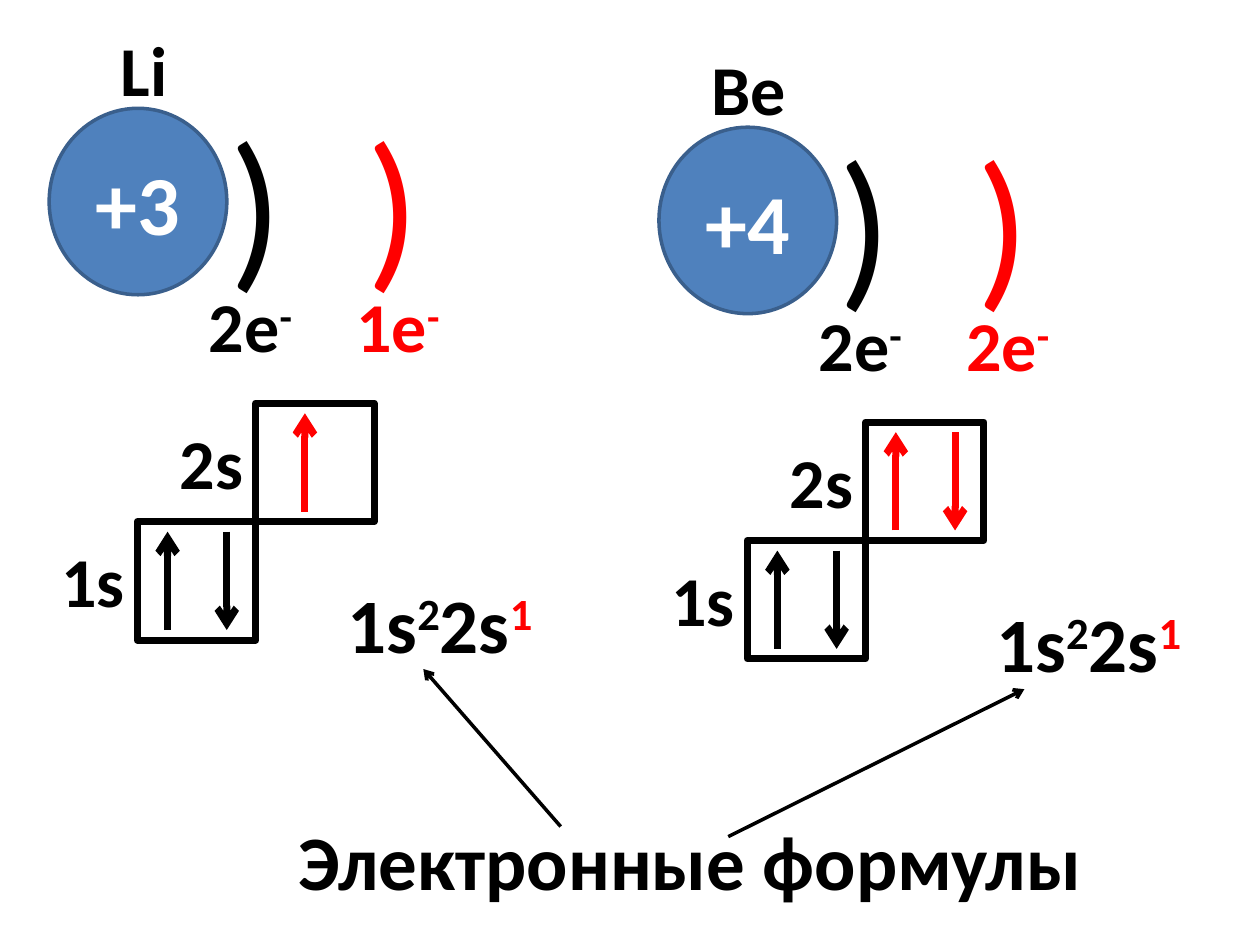
import pptx
import pptx.util
import pptx.dml.color
import pptx.enum.shapes
import pptx.enum.text
import pptx.oxml.ns
import lxml.etree

Inches = pptx.util.Inches
SHAPE = pptx.enum.shapes.MSO_SHAPE
COLORS = {"black": "000000", "red": "FF0000", "white": "FFFFFF",
          "nucleus": "4F81BD", "rim": "3A5F8C"}
LABEL = {"size": pptx.util.Pt(40), "bold": True, "name": "Calibri"}
FORMULA = {**LABEL, "size": pptx.util.Pt(44)}
CHARGE = {**LABEL, "size": pptx.util.Pt(48)}
SHELL = {**LABEL, "size": pptx.util.Pt(100), "bold": False}
CELL = 0.94
ATOMS = [
    {"box": (0.39, 0.16), "symbol": "Li", "symbol_at": (0.47, 0.58),
     "charge": "+3", "outer": "1e", "outer_spins": [(0.39, True)], "formula_x": 2.27},
    {"box": (5.23, 0.31), "symbol": "Be", "symbol_at": (0.32, 0.8),
     "charge": "+4", "outer": "2e", "outer_spins": [(0.24, True), (0.71, False)],
     "formula_x": 2.58},
]


def rgb(name):
    """Return the palette colour of that name."""
    return pptx.dml.color.RGBColor.from_string(COLORS[name])


def add_runs(p, runs, fmt):
    """Add (text, colour, raised) runs to a paragraph."""
    for text, color, raised in runs:
        r = p.add_run()
        r.text = text
        for key, value in fmt.items():
            setattr(r.font, key, value)
        r.font.color.rgb = rgb(color)
        if raised:
            r.font._element.set("baseline", "30000")


def add_text(s, x, y, w, h, runs, fmt=LABEL):
    """Place an unwrapped text box."""
    tf = s.shapes.add_textbox(Inches(x), Inches(y), Inches(w), Inches(h)).text_frame
    tf.word_wrap = False
    tf.auto_size = pptx.enum.text.MSO_AUTO_SIZE.SHAPE_TO_FIT_TEXT
    add_runs(tf.paragraphs[0], runs, fmt)


def add_arrow(s, start, end, color, width):
    """Draw a straight line with an open arrowhead at its end."""
    c = s.shapes.add_connector(pptx.enum.shapes.MSO_CONNECTOR.STRAIGHT,
                               *[Inches(v) for v in (*start, *end)])
    c.line.color.rgb = rgb(color)
    c.line.width = pptx.util.Pt(width)
    qn = pptx.oxml.ns.qn
    lxml.etree.SubElement(c.line._get_or_add_ln(), qn("a:tailEnd"), type="arrow")
    lxml.etree.SubElement(c._element.spPr, qn("a:effectLst"))


def add_outlined(s, kind, x, y, w, h, color, width):
    """Place an unfilled preset shape with an outline."""
    sp = s.shapes.add_shape(kind, Inches(x), Inches(y), Inches(w), Inches(h))
    sp.shadow.inherit = False
    sp.fill.background()
    sp.line.color.rgb = rgb(color)
    sp.line.width = pptx.util.Pt(width)
    return sp


def add_nucleus(s, x, y, charge):
    """Place the nucleus disc with its charge."""
    sp = add_outlined(s, SHAPE.OVAL, x, y, 1.41, 1.48, "rim", 2)
    sp.fill.solid()
    sp.fill.fore_color.rgb = rgb("nucleus")
    tf = sp.text_frame
    tf.vertical_anchor = pptx.enum.text.MSO_ANCHOR.MIDDLE
    p = tf.paragraphs[0]
    p.alignment = pptx.enum.text.PP_ALIGN.CENTER
    add_runs(p, [(charge, "white", False)], CHARGE)


def add_orbital(s, x, y, name, color, spins):
    """Place an orbital cell with its label and spin arrows."""
    add_text(s, x - 0.7, y + 0.08, 0.71, 0.77, [(name, "black", False)])
    for dx, up in spins:
        top, bottom = (x + dx, y + 0.08), (x + dx, y + 0.86)
        start, end = (bottom, top) if up else (top, bottom)
        add_arrow(s, start, end, color, 4)
    add_outlined(s, SHAPE.RECTANGLE, x, y, CELL, CELL, "black", 4)


def add_atom(s, box, symbol, symbol_at, charge, outer, outer_spins, formula_x):
    """Place one element: nucleus, shells, orbitals and formula."""
    x, y = box
    dx, width = symbol_at
    add_nucleus(s, x, y + 0.7, charge)
    add_text(s, x + dx, y, width, 0.77, [(symbol, "black", False)])
    shells = [(1.33, 1.17, "2e", "black"), (2.42, 2.34, outer, "red")]
    for arc_x, label_x, count, color in shells:
        add_text(s, x + arc_x, y + 0.54, 0.63, 1.78, [(")", color, False)], SHELL)
        add_text(s, x + label_x, y + 2.03, 0.88, 0.77,
                 [(count, color, False), ("-", color, True)])
    cell_x, cell_y = x + 0.7, y + 3.98
    add_orbital(s, cell_x, cell_y, "1s", "black", [(0.24, True), (0.71, False)])
    add_orbital(s, cell_x + CELL, cell_y - CELL, "2s", "red", outer_spins)
    add_text(s, x + formula_x, y + 4.37, 1.73, 0.84,
             [("1s", "black", False), ("2", "black", True),
              ("2s", "black", False), ("1", "red", True)], FORMULA)


def add_caption(s, x, y):
    """Place the caption and its arrows to both formulas."""
    add_text(s, x, y, 6.48, 0.84, [("Электронные формулы", "black", False)], FORMULA)
    add_arrow(s, (x + 2.18, y + 0.15), (x + 1.09, y - 1.1), "black", 2)
    add_arrow(s, (x + 3.51, y + 0.23), (x + 5.86, y - 0.94), "black", 2)


def main():
    """Build and save the slide."""
    prs = pptx.Presentation()
    prs.slide_width, prs.slide_height = Inches(10), Inches(7.5)
    s = prs.slides.add_slide(prs.slide_layouts[6])
    for atom in ATOMS:
        add_atom(s, **atom)
    add_caption(s, 2.27, 6.41)
    prs.save("out.pptx")


if __name__ == "__main__":
    main()
